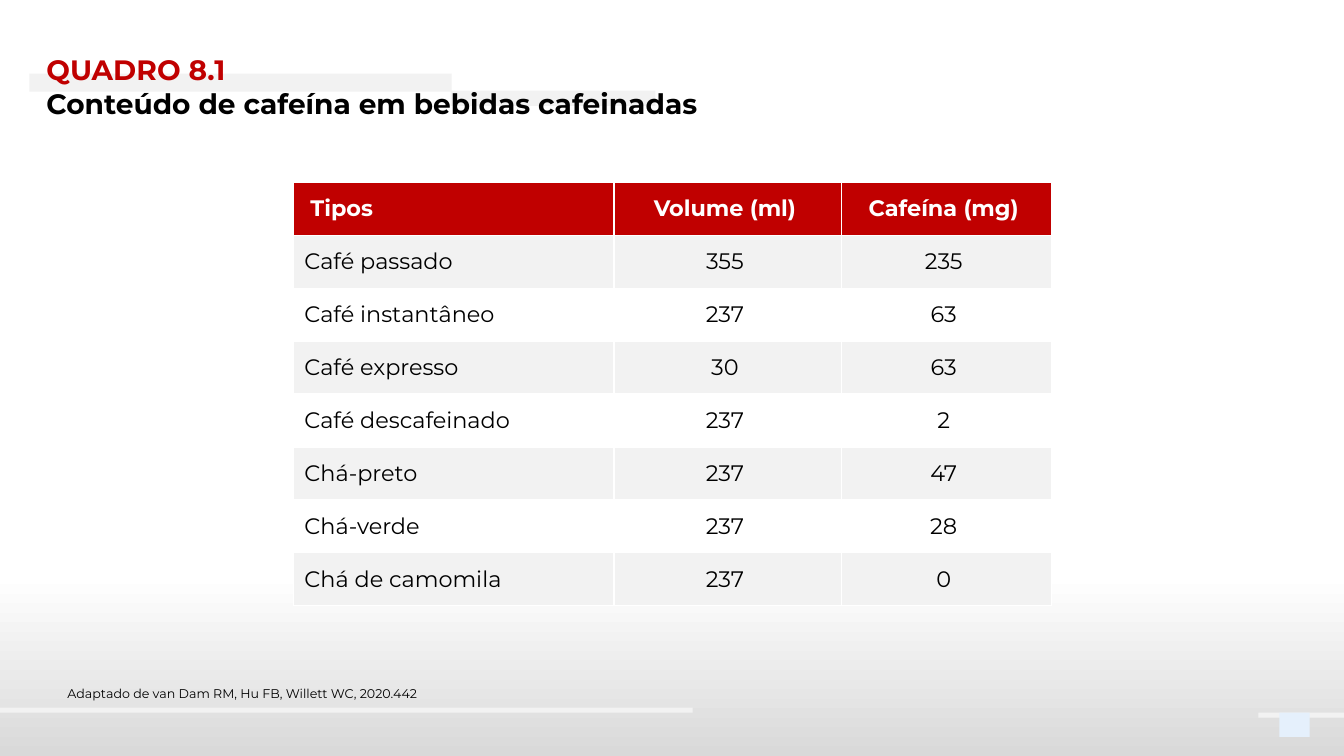
from dataclasses import dataclass

from lxml import etree
from pptx import Presentation
from pptx import util as u
from pptx.dml.color import RGBColor
from pptx.enum import shapes, text
from pptx.oxml.ns import qn

# Content
HEADING = ("QUADRO 8.1", "Conteúdo de cafeína em bebidas cafeinadas")
SOURCE = "Adaptado de van Dam RM, Hu FB, Willett WC, 2020.442"
DRINKS = [
    ("Tipos", "Volume (ml)", "Cafeína (mg)"),
    ("Café passado", "355", "235"),
    ("Café instantâneo", "237", "63"),
    ("Café expresso", "30", "63"),
    ("Café descafeinado", "237", "2"),
    ("Chá-preto", "237", "47"),
    ("Chá-verde", "237", "28"),
    ("Chá de camomila", "237", "0"),
]

# Layout in inches: left, top, width, height
SLIDE_W, SLIDE_H = 13.33, 7.5
HEADING_BOX = (0.36, 0.47, 12.39, 0.77)
SOURCE_BOX = (0.57, 6.76, 3.78, 0.25)
TABLE_LEFT, TABLE_TOP, ROW_H = 2.91, 1.81, 0.525
COLUMN_WIDTHS = (3.18, 2.26, 2.08)
STRIPES = [
    (0.29, 0.73, 4.19, 0.18),
    (4.47, 0.9, 2.03, 0.15),
    (0, 7.02, 6.87, 0.05),
    (12.48, 7.07, 0.85, 0.05),
]
PAGE_MARK = (12.69, 7.07, 0.3, 0.24)


@dataclass(frozen=True)
class Theme:
    font: str = "Montserrat"
    red: str = "C00000"
    black: str = "000000"
    white: str = "FFFFFF"
    pale: str = "F2F2F2"
    shade: str = "D9D9D9"
    mark: str = "E5F0FC"
    heading_size: int = 20
    table_size: int = 16
    source_size: int = 9


THEME = Theme()


def inches(box):
    return [u.Inches(value) for value in box]


def format_text(paragraph, size, color, bold=False):
    for run in paragraph.runs:
        run.font.name = THEME.font
        run.font.size = u.Pt(size)
        run.font.bold = bold
        run.font.color.rgb = RGBColor.from_string(color)


def add_block(slide, box, color):
    block = slide.shapes.add_shape(shapes.MSO_SHAPE.RECTANGLE, *inches(box))
    block.shadow.inherit = False
    block.line.fill.background()
    block.fill.solid()
    block.fill.fore_color.rgb = RGBColor.from_string(color)
    return block


def add_backdrop(slide):
    backdrop = add_block(slide, (0, 0, SLIDE_W, SLIDE_H), THEME.white)
    backdrop.fill.gradient()
    backdrop.fill.gradient_angle = 270
    stops = ((0.76, THEME.white), (1, THEME.shade))
    for stop, (position, color) in zip(backdrop.fill.gradient_stops, stops):
        stop.position = position
        stop.color.rgb = RGBColor.from_string(color)


def add_borders(cell):
    properties = cell._tc.get_or_add_tcPr()
    for side in ("a:lnL", "a:lnR", "a:lnT", "a:lnB"):
        border = etree.SubElement(properties, qn(side), w=str(u.Pt(1)))
        fill = etree.SubElement(border, qn("a:solidFill"))
        etree.SubElement(fill, qn("a:srgbClr"), val=THEME.white)


def format_cell(cell, row, column):
    header = row == 0
    add_borders(cell)
    fill = THEME.red if header else (THEME.pale if row % 2 else THEME.white)
    cell.fill.solid()
    cell.fill.fore_color.rgb = RGBColor.from_string(fill)
    cell.vertical_anchor = text.MSO_ANCHOR.MIDDLE
    cell.margin_top = cell.margin_bottom = 0
    cell.margin_left, cell.margin_right = u.Inches(0.05), u.Inches(0.11)
    paragraph = cell.text_frame.paragraphs[0]
    if column == 0:
        cell.margin_left = u.Inches(0.17 if header else 0.11)
    else:
        paragraph.alignment = text.PP_ALIGN.CENTER
    color = THEME.white if header else THEME.black
    format_text(paragraph, THEME.table_size, color, header)


def add_drinks_table(slide):
    frame = slide.shapes.add_table(
        len(DRINKS), len(COLUMN_WIDTHS),
        *inches((TABLE_LEFT, TABLE_TOP, sum(COLUMN_WIDTHS), ROW_H * len(DRINKS))))
    table = frame.table
    for column, width in zip(table.columns, COLUMN_WIDTHS):
        column.width = u.Inches(width)
    for r, drink in enumerate(DRINKS):
        table.rows[r].height = u.Inches(ROW_H)
        for c, value in enumerate(drink):
            table.cell(r, c).text_frame.text = value
            format_cell(table.cell(r, c), r, c)


def add_source(slide):
    source = slide.shapes.add_textbox(*inches(SOURCE_BOX))
    source.text_frame.word_wrap = False
    source.text_frame.text = SOURCE
    format_text(source.text_frame.paragraphs[0], THEME.source_size, THEME.black)


def place_heading(slide):
    heading = slide.shapes.title
    heading.left, heading.top, heading.width, heading.height = inches(HEADING_BOX)
    frame = heading.text_frame
    frame.text = "\n".join(HEADING)
    frame.word_wrap = True
    frame.auto_size = text.MSO_AUTO_SIZE.NONE
    frame.vertical_anchor = text.MSO_ANCHOR.TOP
    for paragraph, color in zip(frame.paragraphs, (THEME.red, THEME.black)):
        paragraph.alignment = text.PP_ALIGN.JUSTIFY
        paragraph.line_spacing = 1.0
        paragraph.space_before = u.Pt(0)
        format_text(paragraph, THEME.heading_size, color, True)
    # Bring the heading in front of the stripes
    slide.shapes._spTree.append(heading._element)


def main():
    deck = Presentation()
    deck.slide_width, deck.slide_height = inches((SLIDE_W, SLIDE_H))
    slide = deck.slides.add_slide(deck.slide_layouts.get_by_name("Title Only"))

    # Background decoration
    add_backdrop(slide)
    for stripe in STRIPES:
        add_block(slide, stripe, THEME.pale)
    add_block(slide, PAGE_MARK, THEME.mark)

    # Table and texts
    add_drinks_table(slide)
    add_source(slide)
    place_heading(slide)
    deck.save("out.pptx")


if __name__ == "__main__":
    main()
